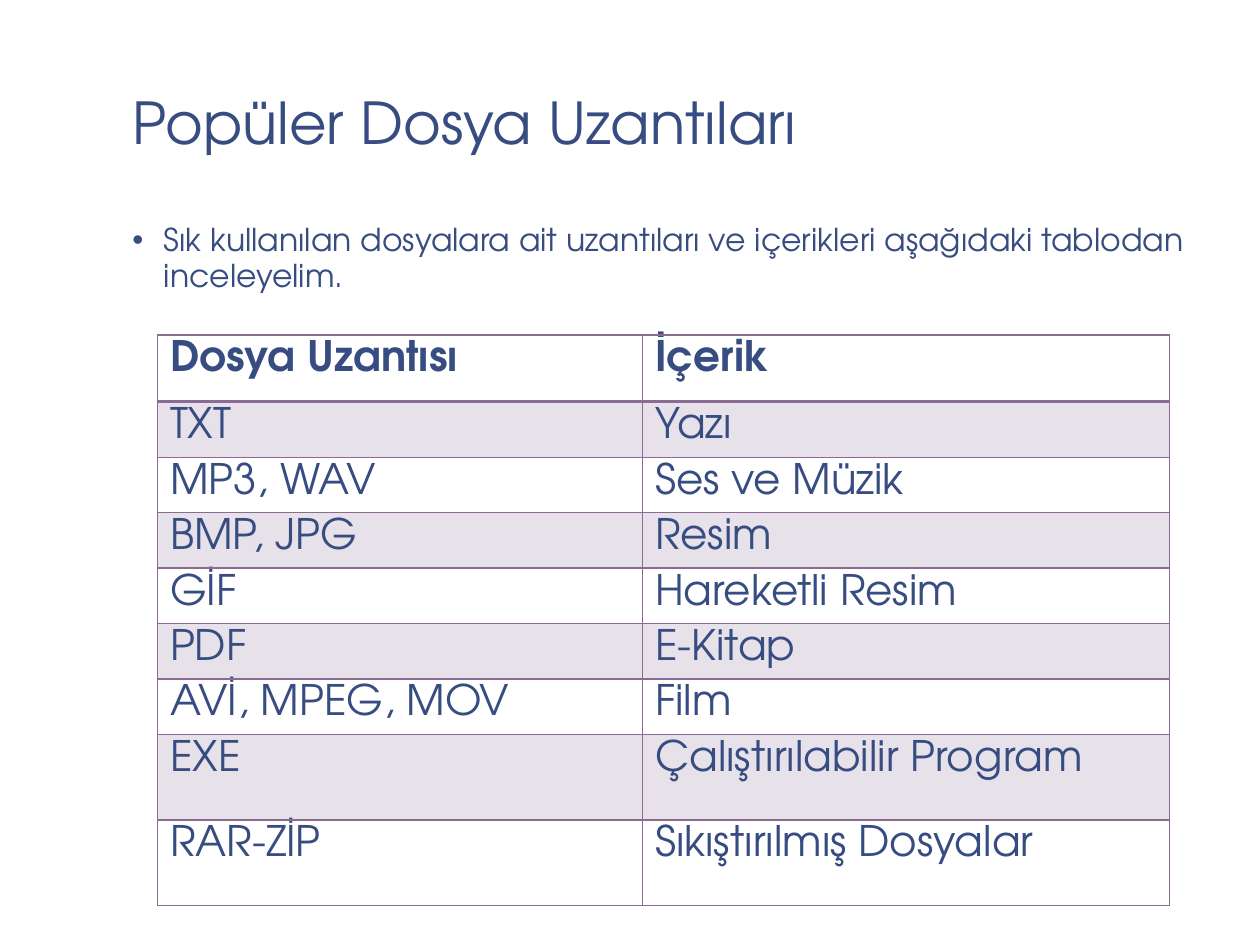
from lxml.etree import SubElement as Sub
from pptx import Presentation
from pptx.dml.color import RGBColor as Rgb
from pptx.enum.text import MSO_ANCHOR as Anchor, MSO_AUTO_SIZE as Auto, PP_ALIGN as Align
from pptx.oxml.ns import qn
from pptx.util import Inches as In, Pt

FONT = "TeX Gyre Adventor"
HUES = {"ink": "374C81", "line": "8B6A94"}
LEFT = 0.92
COLS = [3.85, 4.18]
TALLS = [0.53] + [0.44] * 6 + [0.68] * 2
ROWS = [
    ("Dosya Uzantısı", "İçerik"),
    ("TXT", "Yazı"),
    ("MP3, WAV", "Ses ve Müzik"),
    ("BMP, JPG", "Resim"),
    ("GİF", "Hareketli Resim"),
    ("PDF", "E-Kitap"),
    ("AVİ, MPEG, MOV", "Film"),
    ("EXE", "Çalıştırılabilir Program"),
    ("RAR-ZİP", "Sıkıştırılmış Dosyalar"),
]


def write(para, text, size, gap, bold=False):
    """Add one styled run to a left-aligned paragraph."""
    para.alignment = Align.LEFT
    para.line_spacing = gap
    run = para.add_run()
    run.text = text
    font = run.font
    font.name, font.size, font.bold = FONT, Pt(size), bold
    font.color.rgb = Rgb.from_string(HUES["ink"])


def frame(shape, anchor):
    """Set the insets and wrapping of a text shape and return its frame."""
    box = shape.text_frame
    box.word_wrap, box.auto_size = True, Auto.NONE
    box.vertical_anchor = anchor
    box.margin_left = box.margin_right = In(0.13)
    box.margin_top = box.margin_bottom = In(0.07)
    return box


def add_title(slide, text):
    """Place and fill the title."""
    title = slide.shapes.title
    title.left, title.top = In(LEFT), In(0.08)
    title.width, title.height = In(8.33), In(1.23)
    write(frame(title, Anchor.BOTTOM).paragraphs[0], text, 33, 0.85)


def add_point(slide, text):
    """Add the bulleted sentence."""
    shape = slide.shapes.add_textbox(In(LEFT), In(1.7), In(8.81), In(1.02))
    para = frame(shape, Anchor.TOP).paragraphs[0]
    props = para._p.get_or_add_pPr()
    props.set("marL", str(In(0.25)))
    props.set("indent", str(-In(0.25)))
    tint = Sub(Sub(props, qn("a:buClr")), qn("a:srgbClr"))
    tint.set("val", HUES["ink"])
    Sub(props, qn("a:buFont")).set("typeface", "Arial")
    Sub(props, qn("a:buChar")).set("char", "•")
    write(para, text, 18, 0.95)


def rule(cell, side, width):
    """Draw one border of a cell."""
    line = Sub(cell._tc.get_or_add_tcPr(), qn(f"a:ln{side}"), w=str(Pt(width)))
    Sub(Sub(line, qn("a:solidFill")), qn("a:srgbClr")).set("val", HUES["line"])


def shade(cell, on):
    """Give a cell a pale band or no fill."""
    if not on:
        cell.fill.background()
        return
    cell.fill.solid()
    cell.fill.fore_color.rgb = Rgb.from_string(HUES["line"])
    tint = cell._tc.tcPr.find(f"{qn('a:solidFill')}/{qn('a:srgbClr')}")
    Sub(tint, qn("a:alpha")).set("val", "20000")


def fill_cell(cell, text, row):
    """Write, rule and shade one cell."""
    cell.margin_top, cell.margin_bottom = In(0.07), 0
    write(cell.text_frame.paragraphs[0], text, 24, 0.9, row == 0)
    for side in "LRTB":
        heavy = (side, row) in (("B", 0), ("T", 1))
        rule(cell, side, 2 if heavy else 1)
    shade(cell, row % 2 == 1)


def add_grid(slide):
    """Add the table of file extensions."""
    table = slide.shapes.add_table(
        len(ROWS), len(COLS), In(1.25), In(2.66), In(sum(COLS)), In(sum(TALLS))
    ).table
    table.horz_banding = False
    for col, wide in zip(table.columns, COLS):
        col.width = In(wide)
    for r, (tall, texts) in enumerate(zip(TALLS, ROWS)):
        table.rows[r].height = In(tall)
        for c, text in enumerate(texts):
            fill_cell(table.cell(r, c), text, r)


def main():
    """Build and save the slide."""
    deck = Presentation()
    deck.slide_width, deck.slide_height = In(10), In(7.5)
    slide = deck.slides.add_slide(deck.slide_layouts[5])
    add_title(slide, "Popüler Dosya Uzantıları")
    add_point(slide, "Sık kullanılan dosyalara ait uzantıları ve içerikleri "
                     "aşağıdaki tablodan inceleyelim.")
    add_grid(slide)
    deck.save("out.pptx")


if __name__ == "__main__":
    main()
